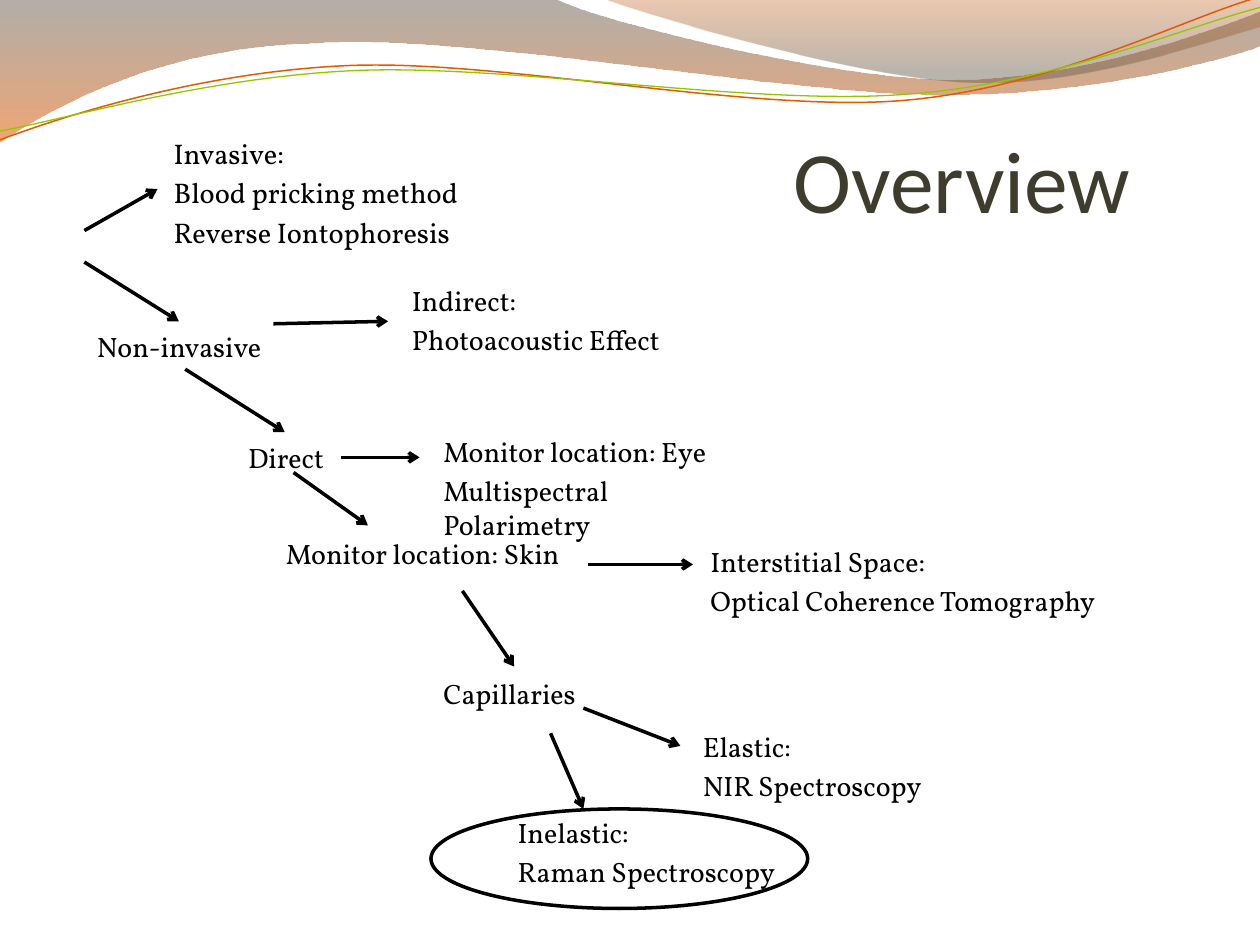
from dataclasses import dataclass
from math import cos, radians, sin

from lxml.etree import SubElement
from pptx import Presentation
from pptx.dml.color import RGBColor
from pptx.enum.shapes import MSO_CONNECTOR, MSO_SHAPE
from pptx.enum.text import MSO_ANCHOR
from pptx.oxml import parse_xml
from pptx.oxml.ns import nsdecls, qn
from pptx.util import Cm, Length, Pt

COLORS = {
    "ink": "000000", "title": "3E3D2D",
    "stone": "554D41", "orange": "E75D00", "rust": "BD4C00", "taupe": "685D4B",
    "orange_wave": "E15B00", "green_wave": "94C600",
}
WAVE_TILT = 2.7  # degrees, counter-clockwise

Point = tuple[float, float]
Outline = list[tuple[Point, ...]]  # one point: straight; three: Bezier
Stop = tuple[int, str, int]  # position %, colour name, opacity %


# All measures below are in inches
@dataclass
class Label:
    left: float
    top: float
    width: float
    height: float
    lines: tuple[str, ...]
    size: float = 16


@dataclass
class Arrow:
    start: Point
    end: Point


@dataclass
class Band:
    outline: Outline
    stops: tuple[Stop, Stop]


@dataclass
class Wave:
    outline: Outline
    center: Point
    color: str
    width: float


BANDS = [
    Band([((0, 0),), ((4.4, -0.01),),
          ((4.76, 0.17), (6.64, 0.63), (7.58, 0.63)),
          ((8.53, 0.63), (9.58, 0.26), (10, 0.09)),
          ((10.01, 0.36),),
          ((9.83, 0.44), (8.7, 0.76), (7.46, 0.75)),
          ((6.22, 0.75), (3.82, 0.28), (2.57, 0.34)),
          ((1.29, 0.36), (0.46, 0.83), (-0.01, 1.13)),
          ((0, 0),)],
         ((0, "stone", 45), (100, "orange", 55))),
    Band([((4.79, -0.01),),
          ((5.09, 0.11), (6.82, 0.62), (7.69, 0.65)),
          ((8.56, 0.69), (9.61, 0.32), (10, 0.21)),
          ((10, 0),), ((4.79, -0.01),)],
         ((0, "rust", 30), (80, "taupe", 45))),
]
WAVES = [
    Wave([((0, 1.11),),
          ((0.48, 0.93), (1.58, 0.57), (2.77, 0.52)),
          ((3.95, 0.47), (5.93, 0.89), (7.13, 0.8)),
          ((8.33, 0.71), (9.38, 0.15), (9.98, -0.02))],
         (4.99, 0.575), "orange_wave", 0.85),
    Wave([((0, 1.04),),
          ((0.47, 0.96), (1.64, 0.61), (2.83, 0.56)),
          ((4.03, 0.51), (5.97, 0.84), (7.17, 0.75)),
          ((8.36, 0.67), (9.41, 0.21), (10, 0.06))],
         (5, 0.59), "green_wave", 0.75),
]
LABELS = [
    Label(1.28, 1.03, 2.64, 1.17,
          ("Invasive:", "Blood pricking method", "Reverse Iontophoresis"), 16.2),
    Label(3.17, 2.2, 2.5, 0.72, ("Indirect:", "Photoacoustic Effect")),
    Label(0.67, 2.57, 1.7, 0.36, ("Non-invasive",)),
    Label(1.87, 3.45, 0.92, 0.36, ("Direct",)),
    Label(3.42, 3.4, 2.67, 0.72,
          ("Monitor location: Eye", "Multispectral Polarimetry")),
    Label(2.17, 4.21, 2.5, 0.48, ("Monitor location: Skin",)),
    Label(5.54, 4.27, 3.29, 0.88,
          ("Interstitial Space:", "Optical Coherence Tomography")),
    Label(3.42, 5.32, 1.59, 0.45, ("Capillaries",)),
    Label(5.48, 5.74, 2.5, 0.72, ("Elastic:", "NIR Spectroscopy")),
    Label(4.01, 6.42, 2.5, 0.72, ("Inelastic:", "Raman Spectroscopy")),
]
ARROWS = [
    Arrow((0.67, 1.83), (1.25, 1.5)),
    Arrow((0.67, 2.08), (1.42, 2.55)),
    Arrow((2.17, 2.57), (3.08, 2.55)),
    Arrow((1.47, 2.93), (2.26, 3.43)),
    Arrow((2.71, 3.63), (3.33, 3.63)),
    Arrow((2.33, 3.75), (2.92, 4.17)),
    Arrow((4.67, 4.48), (5.5, 4.48)),
    Arrow((3.67, 4.69), (4.08, 5.29)),
    Arrow((4.63, 5.62), (5.4, 5.92)),
    Arrow((4.37, 5.82), (4.63, 6.42)),
]


def length(inches: float) -> Length:
    return Cm(inches * 2.54)


def rgb(name: str) -> RGBColor:
    return RGBColor.from_string(COLORS[name])


def turn(point: Point, center: Point, degrees: float) -> Point:
    angle = radians(degrees)
    x, y = point[0] - center[0], point[1] - center[1]
    return (center[0] + x * cos(angle) - y * sin(angle),
            center[1] + x * sin(angle) + y * cos(angle))


def add_outline(slide, outline: Outline, close: bool):
    start, *rest = [(length(x), length(y)) for segment in outline for x, y in segment]
    builder = slide.shapes.build_freeform(*start)
    builder.add_line_segments(rest, close=close)
    shape = builder.convert_to_shape()
    shape.shadow.inherit = False
    # Join each run of three points into one Bezier segment
    lines = shape.element.spPr.iter(qn("a:lnTo"))
    points = iter(list(lines))
    for segment in outline[1:]:
        first, *others = [next(points) for _ in segment]
        if others:
            first.tag = qn("a:cubicBezTo")
            for other in others:
                first.append(other[0])
                other.getparent().remove(other)
    return shape


def add_band(slide, band: Band) -> None:
    shape = add_outline(slide, band.outline, close=True)
    shape.line.fill.background()
    stops = "".join(
        f'<a:gs pos="{position * 1000}"><a:srgbClr val="{COLORS[color]}">'
        f'<a:alpha val="{opacity * 1000}"/></a:srgbClr></a:gs>'
        for position, color, opacity in band.stops)
    gradient = parse_xml(f'<a:gradFill {nsdecls("a")}><a:gsLst>{stops}</a:gsLst>'
                         '<a:lin ang="5400000" scaled="0"/></a:gradFill>')
    shape.element.spPr.find(qn("a:custGeom")).addnext(gradient)


def add_wave(slide, wave: Wave) -> None:
    level = [tuple(turn(point, wave.center, WAVE_TILT) for point in segment)
             for segment in wave.outline]
    shape = add_outline(slide, level, close=False)
    shape.rotation = -WAVE_TILT
    shape.fill.background()
    shape.line.color.rgb = rgb(wave.color)
    shape.line.width = Pt(wave.width)


def add_label(slide, label: Label, font: str = "Vollkorn", color: str = "ink",
              gap: float = 0.2):
    box = slide.shapes.add_textbox(*map(length, (label.left, label.top,
                                                 label.width, label.height)))
    frame = box.text_frame
    frame.word_wrap = True
    for index, line in enumerate(label.lines):
        paragraph = frame.add_paragraph() if index else frame.paragraphs[0]
        paragraph.space_before = Pt(gap * label.size)
        run = paragraph.add_run()
        run.text = line
        run.font.name = font
        run.font.size = Pt(label.size)
        run.font.color.rgb = rgb(color)
    return frame


def add_arrow(slide, arrow: Arrow) -> None:
    connector = slide.shapes.add_connector(
        MSO_CONNECTOR.STRAIGHT, *map(length, (*arrow.start, *arrow.end)))
    connector.line.color.rgb = rgb("ink")
    connector.line.width = Pt(2)
    SubElement(connector.line._get_or_add_ln(), qn("a:tailEnd"), type="arrow")
    SubElement(connector._element.spPr, qn("a:effectLst"))


def main() -> None:
    deck = Presentation()
    deck.slide_width, deck.slide_height = length(10), length(7.5)
    slide = deck.slides.add_slide(deck.slide_layouts[6])

    # Wavy header
    for band in BANDS:
        add_band(slide, band)
    for wave in WAVES:
        add_wave(slide, wave)

    # Title
    title = add_label(slide, Label(6.3, 0.67, 3.75, 1.16, ("Overview",), 50),
                      font="Calibri", color="title", gap=0)
    title.vertical_anchor = MSO_ANCHOR.BOTTOM
    title.margin_left = title.margin_right = title.margin_bottom = 0

    # Tree of methods
    for label in LABELS:
        add_label(slide, label)
    for arrow in ARROWS:
        add_arrow(slide, arrow)

    # Ring around the chosen method
    ring = slide.shapes.add_shape(MSO_SHAPE.OVAL, *map(length, (3.42, 6.42, 2.99, 0.79)))
    ring.shadow.inherit = False
    ring.fill.background()
    ring.line.color.rgb = rgb("ink")
    ring.line.width = Pt(2)

    deck.save("out.pptx")


if __name__ == "__main__":
    main()
